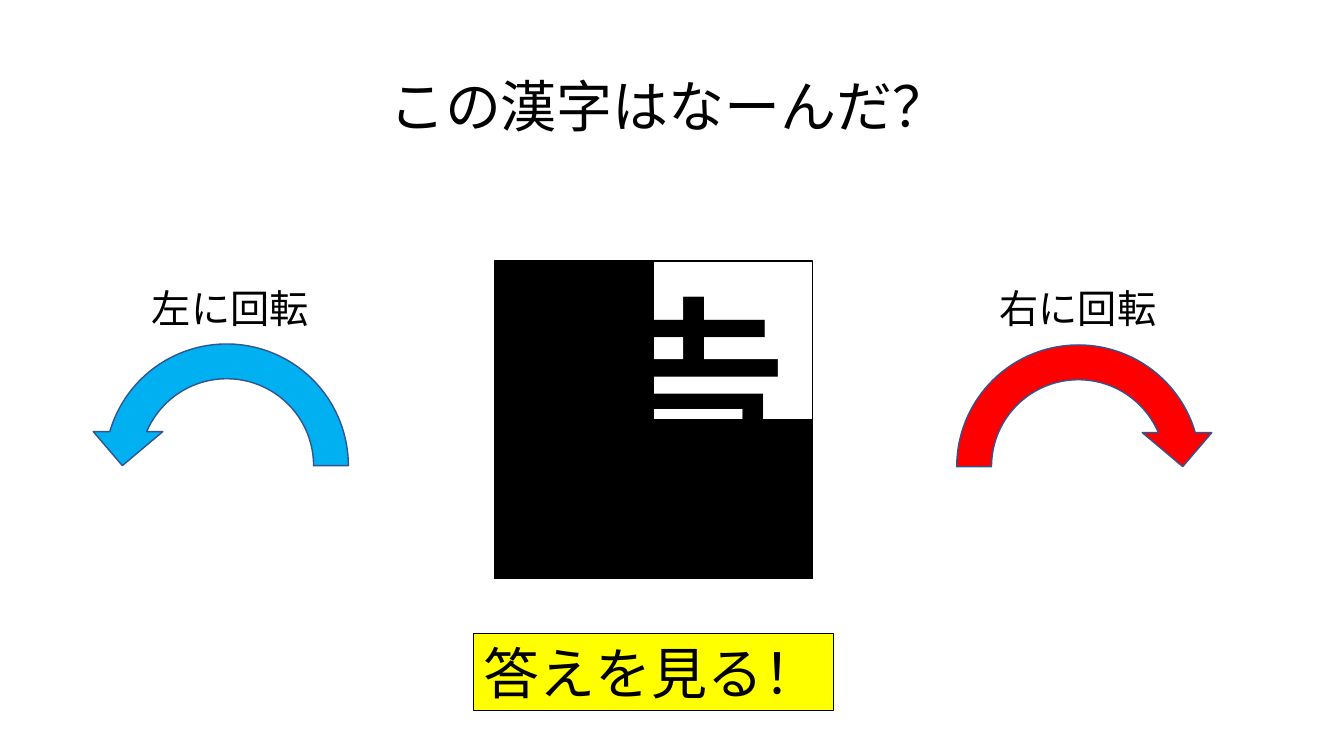
"""Build a kanji puzzle slide with a masked character and two rotation arrows."""
from lxml.etree import SubElement
from pptx import Presentation
from pptx.dml.color import RGBColor
from pptx.enum.shapes import MSO_SHAPE as SHAPE
from pptx.enum.text import MSO_ANCHOR as ANCHOR, MSO_AUTO_SIZE as AUTO, PP_ALIGN as ALIGN
from pptx.oxml.ns import qn
from pptx.util import Pt

FONT = "Noto Sans CJK JP"
COLORS = {
    "ink": "000000",
    "paper": "FFFFFF",
    "left": "00B0F0",
    "right": "FF0000",
    "edge": "325491",
    "button": "FFFF00",
}
CARD_LEFT, CARD_TOP, CARD_SIDE = 353.5, 186.5, 226.8
HALF = CARD_SIDE / 2


def color(name):
    return RGBColor.from_string(COLORS[name])


def write(sp, text, size, align=ALIGN.LEFT, anchor=ANCHOR.TOP, wrap=False):
    tf = sp.text_frame
    tf.text = text
    tf.word_wrap = wrap
    tf.auto_size = AUTO.NONE if wrap else AUTO.SHAPE_TO_FIT_TEXT
    tf.vertical_anchor = anchor
    p = tf.paragraphs[0]
    p.alignment = align
    p.font.size = Pt(size)
    p.font.name = FONT
    p.font.color.rgb = color("ink")
    SubElement(p.font._element, qn("a:ea")).set("typeface", FONT)


def add_shape(s, kind, box, fill, line="ink", width=1):
    sp = s.shapes.add_shape(kind, *map(Pt, box))
    sp.shadow.inherit = False
    sp.fill.solid()
    sp.fill.fore_color.rgb = color(fill)
    sp.line.color.rgb = color(line)
    sp.line.width = Pt(width)
    return sp


def add_title(s, text, box):
    sp = s.shapes.title
    sp.left, sp.top, sp.width, sp.height = map(Pt, box)
    write(sp, text, 40)


def add_label(s, text, left):
    sp = s.shapes.add_textbox(Pt(left), Pt(199.4), Pt(127.4), Pt(41))
    write(sp, text, 28)


def add_arrow(s, left, top, fill, flip=False):
    sp = add_shape(s, SHAPE.CIRCULAR_ARROW, (left, top, 198.7, 198.7), fill, "edge")
    for i, value in enumerate((0.125, 11.423, 204.577, 108, 0.125)):
        sp.adjustments[i] = value
    if flip:
        sp._element.spPr.find(qn("a:xfrm")).set("flipH", "1")


def add_masked_kanji(s, kanji):
    card = add_shape(s, SHAPE.RECTANGLE, (CARD_LEFT, CARD_TOP, CARD_SIDE, CARD_SIDE), "paper")
    write(card, kanji, 199, ALIGN.CENTER, ANCHOR.MIDDLE, wrap=True)
    for shift, angle in ((0, 0), (HALF / 2, 90)):
        box = (CARD_LEFT + shift, CARD_TOP + shift, HALF, CARD_SIDE)
        add_shape(s, SHAPE.RECTANGLE, box, "ink").rotation = angle


def add_button(s, text, box):
    write(add_shape(s, SHAPE.RECTANGLE, box, "button", width=0.75), text, 40)


def main():
    prs = Presentation()
    prs.slide_width, prs.slide_height = Pt(960), Pt(540)
    s = prs.slides.add_slide(prs.slide_layouts[5])
    add_masked_kanji(s, "猿")
    add_title(s, "この漢字はなーんだ？", (270.7, 47.5, 418.3, 55.4))
    add_arrow(s, 671, 234, "right")
    add_arrow(s, 62.6, 233.3, "left", flip=True)
    add_label(s, "左に回転", 101.5)
    add_label(s, "右に回転", 707)
    add_button(s, "答えを見る！", (338.4, 452.2, 257, 55.4))
    prs.save("out.pptx")


if __name__ == "__main__":
    main()
